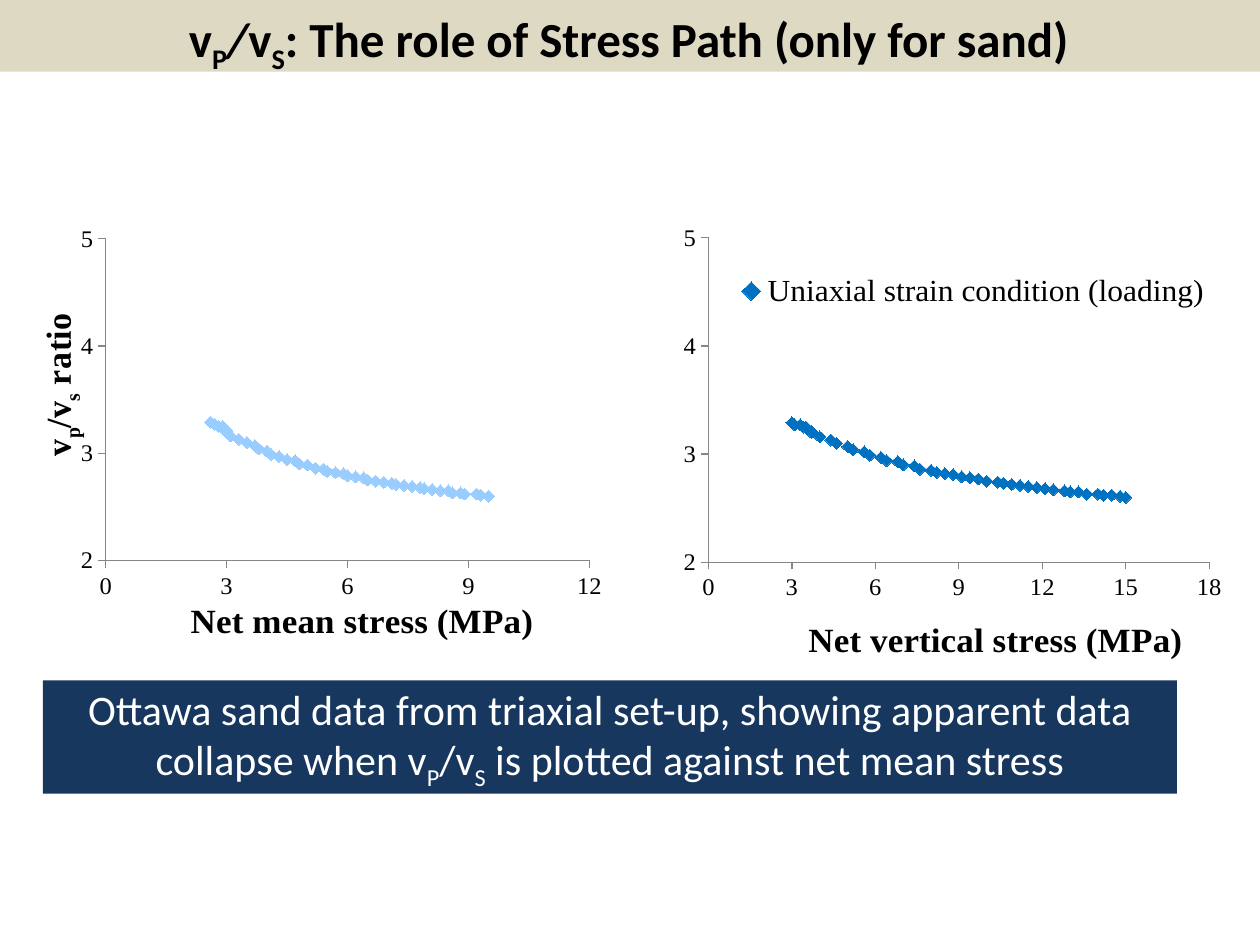
from dataclasses import dataclass
from typing import Optional

from pptx import Presentation
from pptx.chart.data import XyChartData
from pptx.dml.color import RGBColor
from pptx.enum.chart import XL_CHART_TYPE, XL_LEGEND_POSITION, XL_MARKER_STYLE, XL_TICK_MARK
from pptx.enum.shapes import MSO_SHAPE
from pptx.enum.text import MSO_ANCHOR, PP_ALIGN
from pptx.oxml import parse_xml
from pptx.oxml.ns import nsdecls
from pptx.util import Pt

SCATTER = XL_CHART_TYPE.XY_SCATTER
DIAMOND = XL_MARKER_STYLE.DIAMOND
LEGEND_RIGHT = XL_LEGEND_POSITION.RIGHT
TICK_OUT, TICK_NONE = XL_TICK_MARK.OUTSIDE, XL_TICK_MARK.NONE
RECT = MSO_SHAPE.RECTANGLE
CENTER = PP_ALIGN.CENTER
MIDDLE, TOP = MSO_ANCHOR.MIDDLE, MSO_ANCHOR.TOP


@dataclass(frozen=True)
class Theme:
    body_font: str = "Calibri"
    chart_font: str = "Times New Roman"
    black: RGBColor = RGBColor(0x00, 0x00, 0x00)
    white: RGBColor = RGBColor(0xFF, 0xFF, 0xFF)
    band: RGBColor = RGBColor(0xDD, 0xD9, 0xC3)
    navy: RGBColor = RGBColor(0x17, 0x37, 0x5E)
    axis: RGBColor = RGBColor(0x86, 0x86, 0x86)
    light_blue: RGBColor = RGBColor(0x99, 0xCC, 0xFF)
    blue: RGBColor = RGBColor(0x00, 0x70, 0xC0)
    title: int = 28
    caption: int = 24
    axis_title: int = 20
    legend: int = 18
    ticks: int = 14


@dataclass(frozen=True)
class Run:
    text: str
    sub: bool = False
    italic: bool = False


@dataclass(frozen=True)
class Box:
    x: float
    y: float
    w: float
    h: float

    def pts(self) -> tuple:
        return Pt(self.x), Pt(self.y), Pt(self.w), Pt(self.h)


@dataclass(frozen=True)
class StressPlot:
    box: Box
    series: str
    stress: list[float]
    x_max: int
    color: RGBColor
    plot_area: dict[str, float]
    x_title: str
    x_title_at: dict[str, float]
    y_title: Optional[list[Run]] = None
    y_title_at: Optional[dict[str, float]] = None
    legend_at: Optional[dict[str, float]] = None


THEME = Theme()

# Data: both charts share one set of velocity ratios
RATIO = [3.29, 3.27, 3.27, 3.25, 3.25, 3.21, 3.2, 3.16, 3.13, 3.1, 3.07, 3.04, 3.02, 2.99, 2.97,
         2.94, 2.93, 2.9, 2.89, 2.86, 2.85, 2.83, 2.82, 2.81, 2.79, 2.78, 2.77, 2.75, 2.74, 2.73,
         2.72, 2.71, 2.7, 2.69, 2.68, 2.67, 2.66, 2.65, 2.65, 2.63, 2.63, 2.62, 2.62, 2.61, 2.6]
MEAN_STRESS = [2.6, 2.7, 2.7, 2.8, 2.9, 3, 3, 3.1, 3.3, 3.5, 3.7, 3.8, 4, 4.1, 4.3,
               4.5, 4.7, 4.8, 5, 5.2, 5.4, 5.5, 5.7, 5.9, 6, 6.2, 6.4, 6.5, 6.7, 6.9,
               7.1, 7.2, 7.4, 7.6, 7.8, 7.9, 8.1, 8.3, 8.5, 8.6, 8.8, 8.9, 9.2, 9.3, 9.5]
VERTICAL_STRESS = [3, 3.1, 3.3, 3.4, 3.5, 3.7, 3.7, 4, 4.4, 4.6, 5, 5.2, 5.6, 5.8, 6.2,
                   6.4, 6.8, 7, 7.4, 7.6, 8, 8.2, 8.5, 8.8, 9.1, 9.4, 9.7, 10, 10.4, 10.6,
                   10.9, 11.2, 11.5, 11.8, 12.1, 12.4, 12.8, 13, 13.3, 13.6, 14, 14.2, 14.5, 14.8, 15]

TITLE = [Run("v"), Run("P", sub=True), Run("/", italic=True), Run("v"), Run("S", sub=True),
         Run(": The role of Stress Path (only for sand)")]
CAPTION = [Run("Ottawa sand data from triaxial set-up, showing apparent data collapse when v"),
           Run("P", sub=True), Run("/v"), Run("S", sub=True),
           Run(" is plotted against net mean stress")]
RATIO_TITLE = [Run("v"), Run("p", sub=True), Run("/v"), Run("s", sub=True), Run(" ratio")]

PLOTS = [
    StressPlot(Box(8.6, 128.2, 345.6, 244.1), "Series 1", MEAN_STRESS, 12, THEME.light_blue,
               dict(x=0.15, y=0.035, w=0.8, h=0.777),
               "Net mean stress (MPa)", dict(x=0.28, y=0.89),
               y_title=RATIO_TITLE, y_title_at=dict(x=0.03, y=0.21)),
    StressPlot(Box(365.8, 128.2, 342.7, 254.9), "Uniaxial strain condition (loading)",
               VERTICAL_STRESS, 18, THEME.blue,
               dict(x=0.114, y=0.027, w=0.835, h=0.749),
               "Net vertical stress (MPa)", dict(x=0.27, y=0.89),
               legend_at=dict(x=0.16, y=0.1, w=0.79, h=0.1)),
]


def add_runs(p, runs: list[Run], size: int, font: str, color: RGBColor, bold: bool = False) -> None:
    for run in runs:
        r = p.add_run()
        r.text = run.text
        r.font.size, r.font.name, r.font.bold = Pt(size), font, bold
        r.font.italic = run.italic
        r.font.color.rgb = color
        if run.sub:
            r.font._element.set("baseline", "-25000")


def add_rect(s, box: Box, fill: RGBColor):
    sp = s.shapes.add_shape(RECT, *box.pts())
    sp.shadow.inherit = False
    sp.fill.solid()
    sp.fill.fore_color.rgb = fill
    sp.line.fill.background()
    return sp


def write_text(sp, runs: list[Run], size: int, color: RGBColor, anchor, bold: bool = False) -> None:
    tf = sp.text_frame
    tf.word_wrap = True
    tf.vertical_anchor = anchor
    p = tf.paragraphs[0]
    p.alignment = CENTER
    add_runs(p, runs, size, THEME.body_font, color, bold)


def set_layout(part, index: int, at: dict[str, float], inner: bool = False) -> None:
    """Place a chart part by fractions of the chart area."""
    for old in part.xpath("c:layout"):
        part.remove(old)
    target = '<c:layoutTarget val="inner"/>' if inner else ""
    modes = "".join(f'<c:{k}Mode val="edge"/>' for k in "xy")
    values = "".join(f'<c:{k} val="{v}"/>' for k, v in at.items())
    part.insert(index, parse_xml(
        f'<c:layout {nsdecls("c")}><c:manualLayout>{target}{modes}{values}</c:manualLayout></c:layout>'))


def style_axis(axis, low: int, high: int, step: int) -> None:
    axis.minimum_scale, axis.maximum_scale, axis.major_unit = low, high, step
    axis.has_major_gridlines = False
    axis.major_tick_mark, axis.minor_tick_mark = TICK_OUT, TICK_NONE
    axis.format.line.color.rgb = THEME.axis
    axis.format.line.width = Pt(0.75)
    axis.tick_labels.font.size = Pt(THEME.ticks)


def title_axis(axis, runs: list[Run], at: dict[str, float]) -> None:
    p = axis.axis_title.text_frame.paragraphs[0]
    add_runs(p, runs, THEME.axis_title, THEME.chart_font, THEME.black, bold=True)
    set_layout(axis.axis_title._element, 1, at)


def add_plot(s, plot: StressPlot) -> None:
    data = XyChartData()
    points = data.add_series(plot.series)
    for x, y in zip(plot.stress, RATIO):
        points.add_data_point(x, y)
    chart = s.shapes.add_chart(SCATTER, *plot.box.pts(), data).chart
    chart.has_title = False
    chart.font.name, chart.font.size = THEME.chart_font, Pt(THEME.ticks)
    chart.font.color.rgb = THEME.black
    chart.plots[0].vary_by_categories = False

    # Markers only
    series = chart.plots[0].series[0]
    series.smooth = False
    series.format.line.fill.background()
    series.marker.style, series.marker.size = DIAMOND, 7
    series.marker.format.fill.solid()
    series.marker.format.fill.fore_color.rgb = plot.color
    series.marker.format.line.color.rgb = plot.color

    # Axes, titles and legend
    style_axis(chart.category_axis, 0, plot.x_max, 3)
    style_axis(chart.value_axis, 2, 5, 1)
    title_axis(chart.category_axis, [Run(plot.x_title)], plot.x_title_at)
    if plot.y_title:
        title_axis(chart.value_axis, plot.y_title, plot.y_title_at)
    chart.has_legend = plot.legend_at is not None
    if plot.legend_at:
        chart.legend.position = LEGEND_RIGHT
        chart.legend.include_in_layout = False
        chart.legend.font.size = Pt(THEME.legend)
        set_layout(chart.legend._element, 1, plot.legend_at)
    set_layout(chart.element.xpath("c:chart/c:plotArea")[0], 0, plot.plot_area, inner=True)


def main() -> None:
    prs = Presentation()
    prs.slide_width, prs.slide_height = Pt(720), Pt(540)
    s = prs.slides.add_slide(prs.slide_layouts[6])

    # Title band
    add_rect(s, Box(0, 0, 720, 41), THEME.band)
    heading = s.shapes.add_textbox(*Box(0.7, 1.4, 717, 41).pts())
    write_text(heading, TITLE, THEME.title, THEME.black, TOP, bold=True)

    # Caption
    caption = add_rect(s, Box(24.5, 388.8, 648, 64.8), THEME.navy)
    write_text(caption, CAPTION, THEME.caption, THEME.white, MIDDLE)

    # Charts
    for plot in PLOTS:
        add_plot(s, plot)

    prs.save("out.pptx")


if __name__ == "__main__":
    main()
